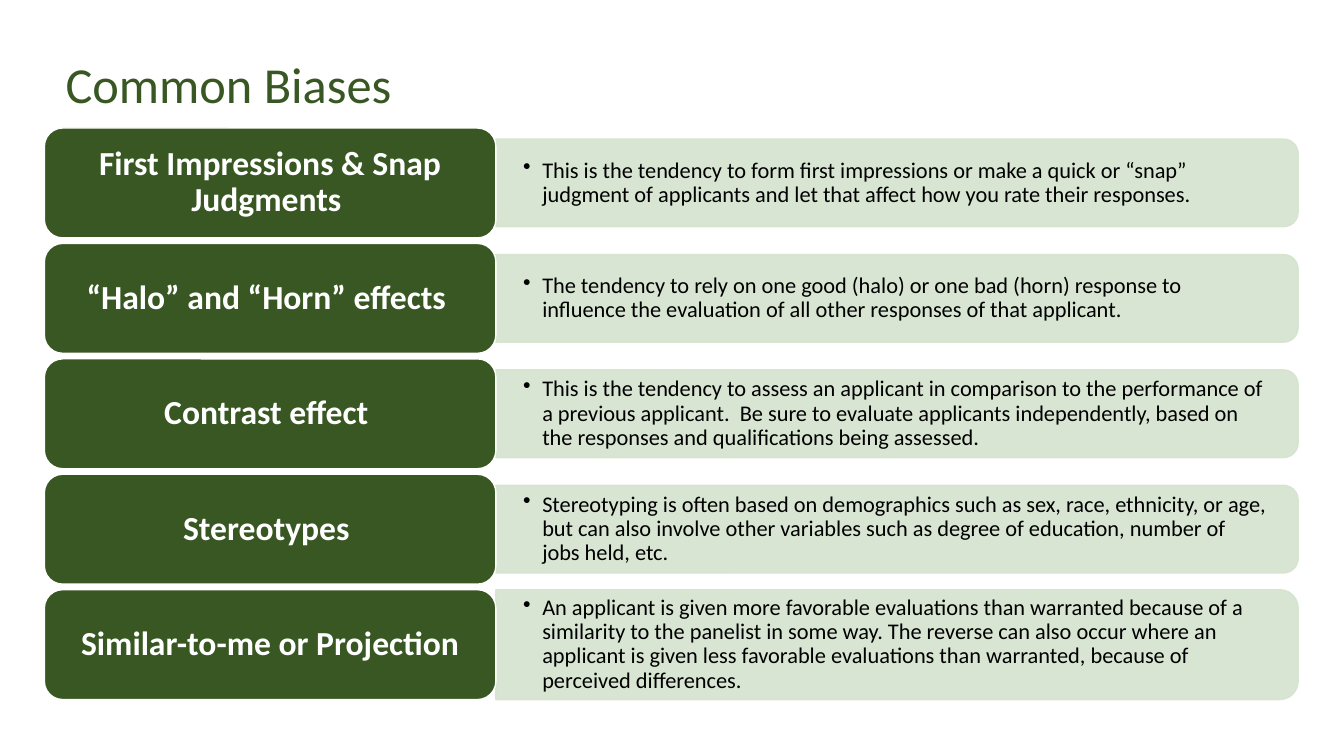
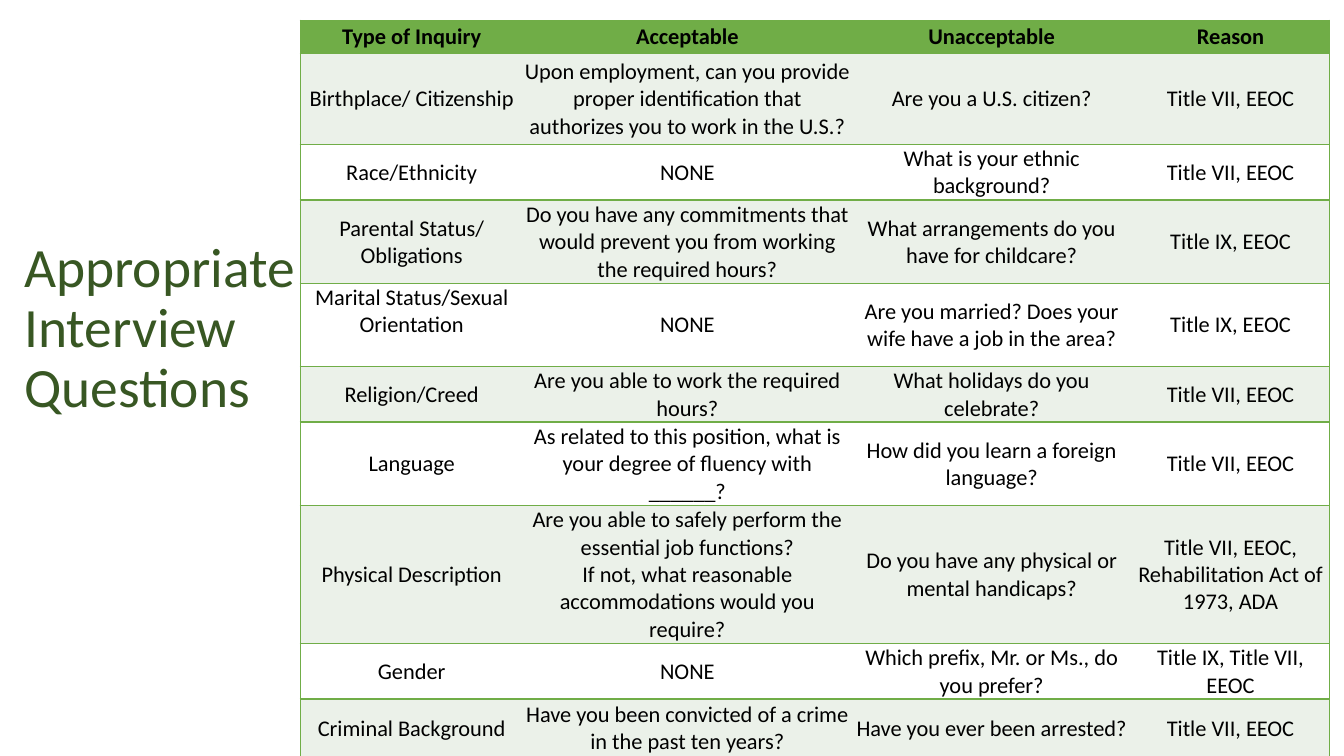
from lxml.etree import SubElement
from pptx import Presentation
from pptx.dml.color import RGBColor
from pptx.enum.shapes import MSO_SHAPE as Preset
from pptx.enum.text import MSO_ANCHOR as Anchor, MSO_AUTO_SIZE as AutoSize, PP_ALIGN as Align
from pptx.oxml.ns import qn
from pptx.util import Pt

EMU_PER_PX = 4572
SLIDE_WIDTH, SLIDE_HEIGHT = 2667, 1500
TITLE_ONLY = 5
FONT = "Calibri"

DARK_GREEN = RGBColor(0x38, 0x57, 0x23)
GREEN = RGBColor(0x70, 0xAD, 0x47)
PALE_GREEN = RGBColor(0xD5, 0xE3, 0xCF)
BAND_GREEN = RGBColor(0xEB, 0xF1, 0xE9)
WHITE = RGBColor(0xFF, 0xFF, 0xFF)
BLACK = RGBColor(0x00, 0x00, 0x00)

BIASES = [
    ("First Impressions & Snap Judgments ",
     "This is the tendency to form first impressions or make a quick or “snap” judgment of "
     "applicants and let that affect how you rate their responses."),
    ("“Halo” and “Horn” effects ",
     "The tendency to rely on one good (halo) or one bad (horn) response to influence the "
     "evaluation of all other responses of that applicant."),
    ("Contrast effect ",
     "This is the tendency to assess an applicant in comparison to the performance of a "
     "previous applicant.  Be sure to evaluate applicants independently, based on the "
     "responses and qualifications being assessed."),
    ("Stereotypes ",
     "Stereotyping is often based on demographics such as sex, race, ethnicity, or age, but "
     "can also involve other variables such as degree of education, number of jobs held, etc."),
    ("Similar-to-me or Projection",
     "An applicant is given more favorable evaluations than warranted because of a similarity "
     "to the panelist in some way. The reverse can also occur where an applicant is given less "
     "favorable evaluations than warranted, because of perceived differences."),
]
BAR_HEIGHTS = [174, 174, 174, 174, 218]

COLUMN_WIDTHS = [442, 652, 556, 392]
INQUIRIES = [
    (66, "Type of Inquiry", "Acceptable", "Unacceptable", "Reason"),
    (180, "Birthplace/ Citizenship",
     "Upon employment, can you provide proper identification that authorizes you to work in the U.S.?",
     "Are you a U.S. citizen?", "Title VII, EEOC"),
    (109, "Race/Ethnicity", "NONE", "What is your ethnic background?", "Title VII, EEOC"),
    (165, "Parental Status/ Obligations",
     "Do you have any commitments that would prevent you from working the required hours?",
     "What arrangements do you have for childcare?", "Title IX, EEOC"),
    (165, "Marital Status/Sexual Orientation", "NONE",
     "Are you married? Does your wife have a job in the area?", "Title IX, EEOC"),
    (109, "Religion/Creed", "Are you able to work the required hours?",
     "What holidays do you celebrate?", "Title VII, EEOC"),
    (165, "Language", "As related to this position, what is your degree of fluency with ______?",
     "How did you learn a foreign language?", "Title VII, EEOC"),
    (274, "Physical Description",
     "Are you able to safely perform the essential job functions?\n"
     "If not, what reasonable accommodations would you require?",
     "Do you have any physical or mental handicaps?",
     "Title VII, EEOC, Rehabilitation Act of 1973, ADA"),
    (109, "Gender", "NONE", "Which prefix, Mr. or Ms., do you prefer?", "Title IX, Title VII, EEOC"),
    (115, "Criminal Background", "Have you been convicted of a crime in the past ten years?",
     "Have you ever been arrested?", "Title VII, EEOC"),
]
TOP_ANCHORED = "Marital Status/Sexual Orientation"


def px(length):
    return int(length * EMU_PER_PX)


def place(box):
    return [px(length) for length in box]


def style_para(para, size, color, bold=False, align=Align.LEFT, spacing=0.9):
    para.alignment = align
    para.line_spacing = spacing
    font = para.font
    font.name, font.size, font.bold = FONT, Pt(size), bold
    font.color.rgb = color


def add_page(deck, title, box, size):
    page = deck.slides.add_slide(deck.slide_layouts[TITLE_ONLY])
    holder = page.shapes.title
    holder.left, holder.top, holder.width, holder.height = place(box)
    frame = holder.text_frame
    frame.text = title
    frame.word_wrap = True
    frame.auto_size = AutoSize.NONE
    frame.vertical_anchor = Anchor.MIDDLE
    style_para(frame.paragraphs[0], size, DARK_GREEN)
    return page


def add_panel(page, preset, box, fill, line):
    panel = page.shapes.add_shape(preset, *place(box))
    panel.shadow.inherit = False
    panel.fill.solid()
    panel.fill.fore_color.rgb = fill
    panel.line.color.rgb = line
    panel.line.width = Pt(1)
    return panel


def add_bar(page, box):
    left, top, width, height = box
    offset = (width - height) // 2
    upright = (left + offset, top - offset, height, width)
    bar = add_panel(page, Preset.ROUND_2_SAME_RECTANGLE, upright, PALE_GREEN, PALE_GREEN)
    bar.rotation = 90
    for color in bar._element.spPr.iter(qn("a:srgbClr")):
        SubElement(color, qn("a:alpha"), val="90000")


def add_description(page, text, box):
    frame = page.shapes.add_textbox(*place(box)).text_frame
    frame.word_wrap = True
    frame.vertical_anchor = Anchor.MIDDLE
    frame.margin_left = frame.margin_right = px(54)
    frame.margin_top = frame.margin_bottom = 0
    frame.text = text
    para = frame.paragraphs[0]
    props = para._p.get_or_add_pPr()
    props.set("marL", str(px(38)))
    props.set("indent", str(-px(38)))
    SubElement(props, qn("a:buChar"), char="•")
    style_para(para, 16, BLACK)


def add_heading(page, text, box):
    frame = add_panel(page, Preset.ROUNDED_RECTANGLE, box, DARK_GREEN, WHITE).text_frame
    frame.word_wrap = True
    frame.vertical_anchor = Anchor.MIDDLE
    frame.text = text
    style_para(frame.paragraphs[0], 24, WHITE, bold=True, align=Align.CENTER)


def add_bias_list(page, left, top):
    heading_width, heading_height, pitch, bar_width = 896, 218, 229, 1592
    for row, ((heading, description), height) in enumerate(zip(BIASES, BAR_HEIGHTS)):
        row_top = top + row * pitch
        bar_left = left + heading_width
        bar_top = row_top + (heading_height - height) // 2
        add_bar(page, (bar_left, bar_top, bar_width, height))
        add_description(page, description, (bar_left, bar_top, bar_width - 8, height))
        add_heading(page, heading, (left, row_top, heading_width, heading_height))


def set_borders(cell, visible):
    props = cell._tc.get_or_add_tcPr()
    for side in "LRTB":
        line = SubElement(props, qn(f"a:ln{side}"), w=str(Pt(1)))
        if side in visible:
            fill = SubElement(line, qn("a:solidFill"))
            SubElement(fill, qn("a:srgbClr"), val=str(GREEN))
        else:
            SubElement(line, qn("a:noFill"))


def fill_cell(cell, text, color, bold):
    cell.fill.solid()
    cell.fill.fore_color.rgb = color
    cell.margin_left = cell.margin_right = cell.margin_top = px(2)
    cell.margin_bottom = 0
    cell.vertical_anchor = Anchor.TOP if text == TOP_ANCHORED else Anchor.MIDDLE
    cell.text = text
    for para in cell.text_frame.paragraphs:
        style_para(para, 16, BLACK, bold, Align.CENTER, 1.0)


def add_inquiry_table(page, left, top):
    width = sum(COLUMN_WIDTHS)
    height = sum(row[0] for row in INQUIRIES)
    table = page.shapes.add_table(
        len(INQUIRIES), len(COLUMN_WIDTHS), *place((left, top, width, height))).table
    table.horz_banding = False
    for column, column_width in zip(table.columns, COLUMN_WIDTHS):
        column.width = px(column_width)
    side_borders = {0: "L", len(COLUMN_WIDTHS) - 1: "R"}
    for row, (row_height, *texts) in enumerate(INQUIRIES):
        table.rows[row].height = px(row_height)
        color = GREEN if row == 0 else BAND_GREEN if row % 2 else WHITE
        for column, text in enumerate(texts):
            cell = table.cell(row, column)
            set_borders(cell, "TB" + side_borders.get(column, ""))
            fill_cell(cell, text, color, bold=row == 0)


def main():
    deck = Presentation()
    deck.slide_width, deck.slide_height = px(SLIDE_WIDTH), px(SLIDE_HEIGHT)
    biases = add_page(deck, "Common Biases", (110, 48, 2386, 248), 36)
    add_bias_list(biases, 88, 254)
    questions = add_page(
        deck, "Appropriate Interview \vQuestions", (28, 474, 866, 360), 39.6)
    add_inquiry_table(questions, 596, 40)
    deck.save("out.pptx")


if __name__ == "__main__":
    main()
